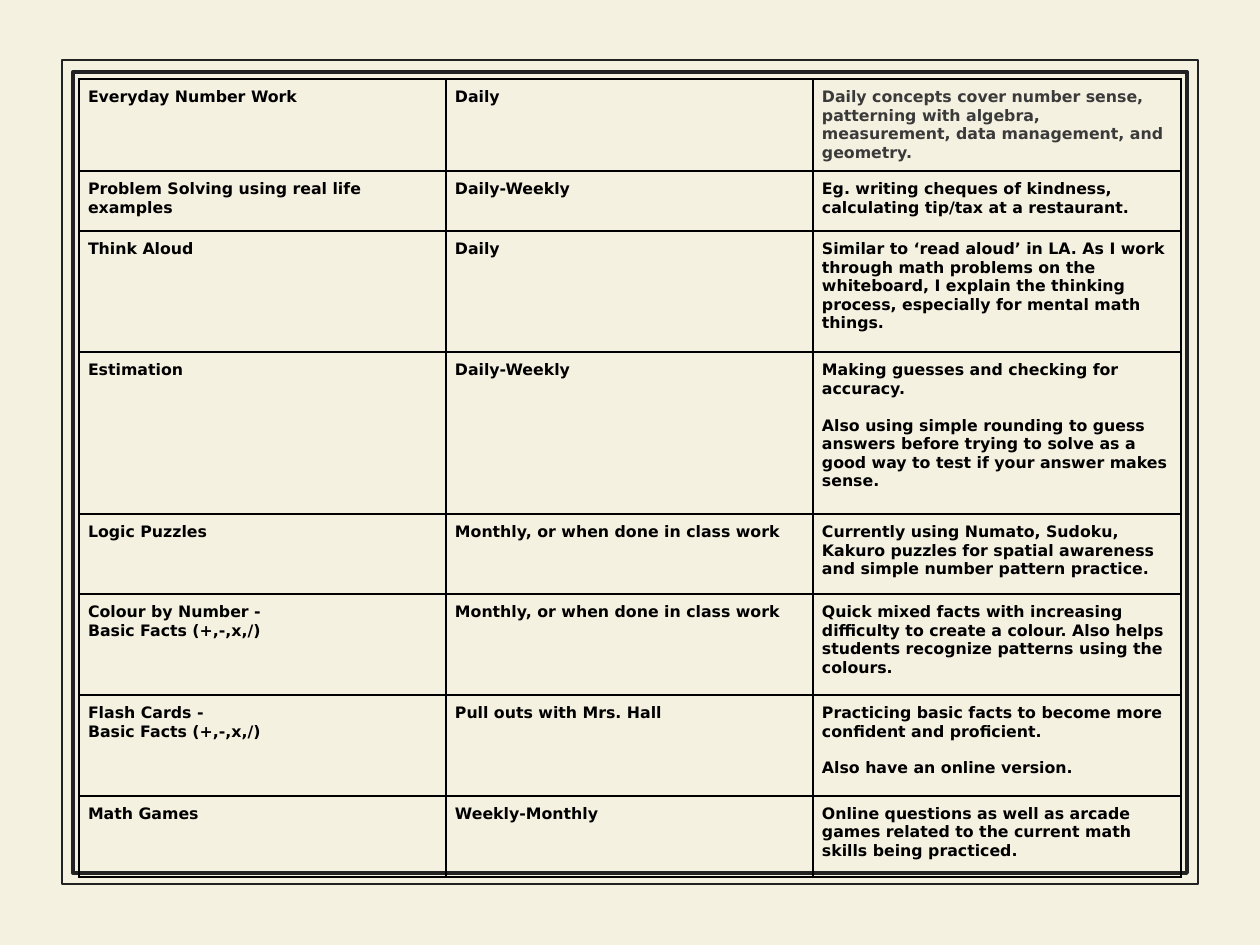
from pptx import Presentation, util as u
from pptx.dml.color import RGBColor
from pptx.enum import shapes
from lxml import etree

PX = 914400 // 126  # EMU per pixel
NS = "http://schemas.openxmlformats.org/drawingml/2006/main"


def rgb(value):
    return RGBColor.from_string(value)


def add_borders(cell, color, width):
    tcPr = cell._tc.get_or_add_tcPr()
    for i, side in enumerate(("lnL", "lnR", "lnT", "lnB")):
        ln = etree.fromstring(
            f'<a:{side} xmlns:a="{NS}" w="{u.Pt(width)}"><a:solidFill>'
            f'<a:srgbClr val="{color}"/></a:solidFill></a:{side}>')
        tcPr.insert(i, ln)


prs = Presentation()
prs.slide_width, prs.slide_height = 1260 * PX, 945 * PX
s = prs.slides.add_slide(prs.slide_layouts[6])
s.background.fill.solid()
s.background.fill.fore_color.rgb = rgb("F5F1E0")

# Double frame: thin outside, thick inside
for x, y, w, h, weight in ((62, 60, 1136, 824, 0.75), (73, 72, 1114, 801, 2.25)):
    frame = s.shapes.add_shape(shapes.MSO_SHAPE.RECTANGLE,
                               x * PX, y * PX, w * PX, h * PX)
    frame.shadow.inherit = False
    frame.fill.background()
    frame.line.color.rgb = rgb("222222")
    frame.line.width = u.Pt(weight)

# Activity, frequency, description; each cell is a list of paragraphs
rows = [
    (91, ["Everyday Number Work"], ["Daily"],
     ["Daily concepts cover number sense, patterning with algebra, "
      "measurement, data management, and geometry."]),
    (60, ["Problem Solving using real life examples"], ["Daily-Weekly"],
     ["Eg. writing cheques of kindness, calculating tip/tax at a restaurant."]),
    (121, ["Think Aloud"], ["Daily"],
     ["Similar to ‘read aloud’ in LA. As I work through math problems on the "
      "whiteboard, I explain the thinking process, especially for mental math "
      "things."]),
    (162, ["Estimation"], ["Daily-Weekly"],
     ["Making guesses and checking for accuracy.",
      "Also using simple rounding to guess answers before trying to solve as a "
      "good way to test if your answer makes sense."]),
    (80, ["Logic Puzzles"], ["Monthly, or when done in class work"],
     ["Currently using Numato, Sudoku, Kakuro puzzles for spatial awareness "
      "and simple number pattern practice."]),
    (101, ["Colour by Number -", "Basic Facts (+,-,x,/)"],
     ["Monthly, or when done in class work"],
     ["Quick mixed facts with increasing difficulty to create a colour. Also "
      "helps students recognize patterns using the colours."]),
    (101, ["Flash Cards -", "Basic Facts (+,-,x,/)"], ["Pull outs with Mrs. Hall"],
     ["Practicing basic facts to become more confident and proficient.",
      "Also have an online version."]),
    (81, ["Math Games"], ["Weekly-Monthly"],
     ["Online questions as well as arcade games related to the current math "
      "skills being practiced."]),
]

# Table
height = sum(row[0] for row in rows)
table = s.shapes.add_table(len(rows), 3, 79 * PX, 79 * PX,
                           1102 * PX, height * PX).table
table.first_row = table.horz_banding = False
for column, width in zip(table.columns, (367, 367, 368)):
    column.width = width * PX

for i, (row_height, *cells) in enumerate(rows):
    table.rows[i].height = row_height * PX
    for j, paragraphs in enumerate(cells):
        cell = table.cell(i, j)
        cell.margin_left = cell.margin_right = 9 * PX
        cell.margin_top = cell.margin_bottom = 9 * PX
        cell.fill.background()
        add_borders(cell, "000000", 1)
        tf = cell.text_frame
        for k, words in enumerate(paragraphs):
            p = tf.add_paragraph() if k else tf.paragraphs[0]
            if k and j == 2:  # one line of space between descriptions
                p.space_before = u.Pt(10.5)
            r = p.add_run()
            r.text = words
            r.font.name = "DejaVu Sans"
            r.font.size = u.Pt(9)
            r.font.bold = True
            r.font.color.rgb = rgb("3A3A3A" if (i, j) == (0, 2) else "000000")

prs.save("out.pptx")
